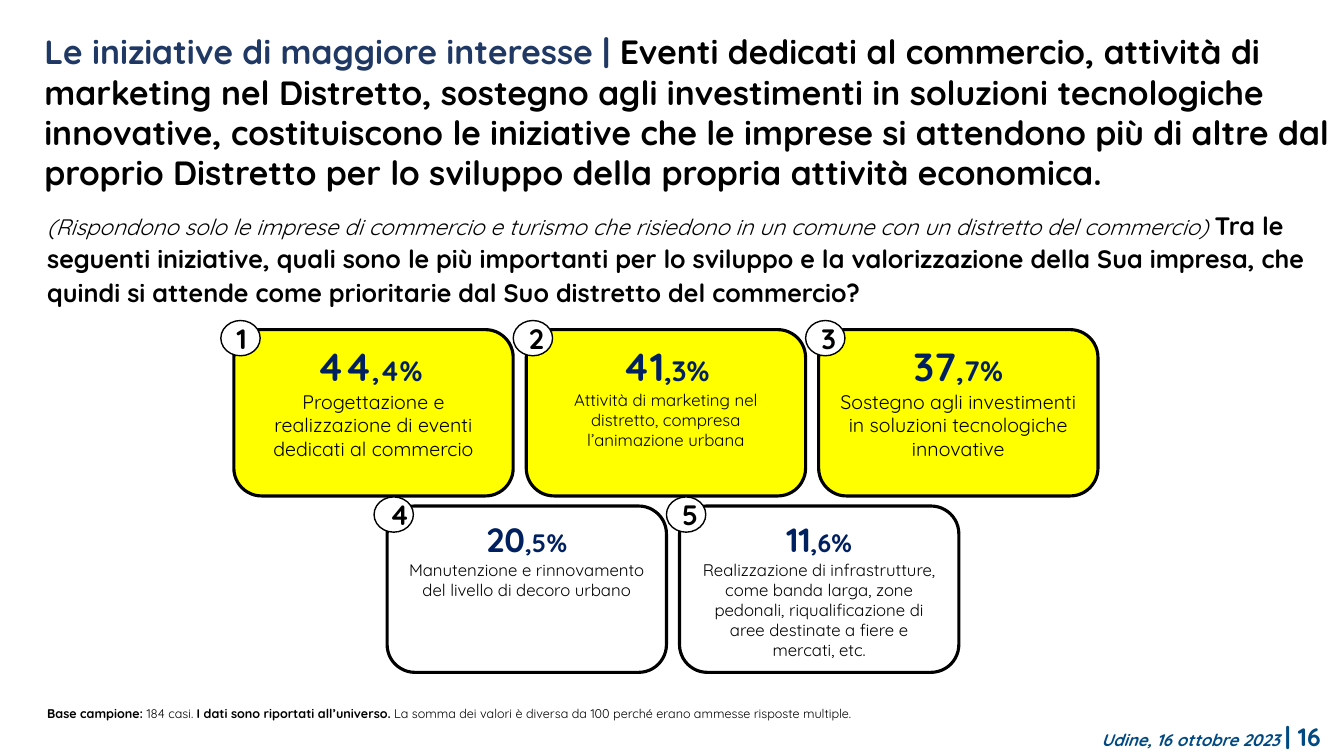
from pptx import Presentation
from pptx.dml.color import RGBColor
from pptx.enum.shapes import MSO_SHAPE
from pptx.enum.text import MSO_ANCHOR, PP_ALIGN
from pptx.util import Inches, Pt

ROUNDED, OVAL = MSO_SHAPE.ROUNDED_RECTANGLE, MSO_SHAPE.OVAL
TOP, MIDDLE = MSO_ANCHOR.TOP, MSO_ANCHOR.MIDDLE
LEFT, CENTER, RIGHT, JUSTIFY = PP_ALIGN.LEFT, PP_ALIGN.CENTER, PP_ALIGN.RIGHT, PP_ALIGN.JUSTIFY

FONT = "Quicksand"
COLORS = {"black": "000000", "white": "FFFFFF", "yellow": "FFFF00",
          "title": "203864", "figure": "002060", "footer": "014983"}

SLIDE_WIDTH, SLIDE_HEIGHT = 13.33, 7.5
MARGIN = 0.37
CARD_WIDTH, CARD_HEIGHT = 2.77, 1.65
COLUMN_STEP, ROW_STEP = 2.9, 1.75
BADGE_WIDTH, BADGE_HEIGHT = 0.39, 0.35
BADGE_SHIFT_X, BADGE_SHIFT_Y = 0.13, 0.09

# Each row: left edge, fill, sizes of whole number and decimals, cards.
# Each card: whole number, decimals, label, label size.
CARD_ROWS = [
    (2.32, "yellow", 28, 20, [
        ("44", ",4% ", "Progettazione e realizzazione di eventi dedicati al commercio", 14),
        ("41", ",3%", "Attività di marketing nel distretto, compresa l’animazione urbana", 12),
        ("37", ",7%", "Sostegno agli investimenti in soluzioni tecnologiche innovative", 14),
    ]),
    (3.84, "white", 24, 18, [
        ("20", ",5%", "Manutenzione e rinnovamento del livello di decoro urbano", 12),
        ("11", ",6%", "Realizzazione di infrastrutture, come banda larga, zone pedonali, "
                      "riqualificazione di aree destinate a fiere e mercati, etc.", 12),
    ]),
]


def color(name):
    return RGBColor.from_string(COLORS[name])


def add_span(para, text, size, ink="black", bold=False, italic=False):
    span = para.add_run()
    span.text = text
    font = span.font
    font.name, font.size, font.bold, font.italic = FONT, Pt(size), bold, italic
    font.color.rgb = color(ink)


def add_text(page, box, spans, align=LEFT, anchor=TOP, line_spacing=None, insets=(0.1, 0.05)):
    """Place one paragraph; each span is a (text, format) pair."""
    frame = page.shapes.add_textbox(*map(Inches, box)).text_frame
    frame.word_wrap = True
    frame.vertical_anchor = anchor
    frame.margin_left = frame.margin_right = Inches(insets[0])
    frame.margin_top = frame.margin_bottom = Inches(insets[1])
    para = frame.paragraphs[0]
    para.alignment = align
    if line_spacing:
        para.line_spacing = line_spacing
    for text, style in spans:
        add_span(para, text, **style)


def add_outlined(page, kind, box, fill, line_width, anchor):
    """Add a black-outlined shape and return its text frame."""
    shape = page.shapes.add_shape(kind, *map(Inches, box))
    shape.shadow.inherit = False
    shape.fill.solid()
    shape.fill.fore_color.rgb = color(fill)
    shape.line.color.rgb = color("black")
    shape.line.width = Pt(line_width)
    frame = shape.text_frame
    frame.word_wrap = True
    frame.vertical_anchor = anchor
    frame.paragraphs[0].alignment = CENTER
    return frame


def add_card(page, left, top, rank, card, fill, whole_size, decimal_size):
    whole, decimals, label, label_size = card
    frame = add_outlined(page, ROUNDED, (left, top, CARD_WIDTH, CARD_HEIGHT), fill, 2.25, TOP)
    figure = frame.paragraphs[0]
    add_span(figure, whole, whole_size, "figure", bold=True)
    add_span(figure, decimals, decimal_size, "figure", bold=True)
    caption = frame.add_paragraph()
    caption.alignment = CENTER
    add_span(caption, label, label_size)
    badge = add_outlined(page, OVAL, (left - BADGE_SHIFT_X, top - BADGE_SHIFT_Y,
                                      BADGE_WIDTH, BADGE_HEIGHT), "white", 1, MIDDLE)
    add_span(badge.paragraphs[0], str(rank), 20, bold=True)


def add_ranking(page, top):
    rank = 0
    for row, (left, fill, whole_size, decimal_size, cards) in enumerate(CARD_ROWS):
        for column, card in enumerate(cards):
            rank += 1
            add_card(page, left + column * COLUMN_STEP, top + row * ROW_STEP,
                     rank, card, fill, whole_size, decimal_size)


def add_heading(page, box):
    add_text(page, box, [
        ("Le iniziative di maggiore interesse | ", dict(size=24, ink="title", bold=True)),
        ("Eventi dedicati al commercio, attività di marketing nel Distretto, sostegno agli "
         "investimenti in soluzioni tecnologiche innovative, costituiscono le iniziative che "
         "le imprese si attendono più di altre dal proprio Distretto per lo sviluppo della "
         "propria attività economica.", dict(size=24, bold=True)),
    ], insets=(0.07, 0.04))


def add_question(page, box):
    add_text(page, box, [
        ("(Rispondono solo le imprese di commercio e turismo che risiedono in un comune con "
         "un distretto del commercio) ", dict(size=16, italic=True)),
        ("Tra le seguenti iniziative, quali sono le più importanti per lo sviluppo e la "
         "valorizzazione della Sua impresa, che quindi si attende come prioritarie dal Suo "
         "distretto del commercio?", dict(size=18, bold=True)),
    ], line_spacing=1.1)


def add_sample_note(page, box):
    add_text(page, box, [
        ("Base campione: ", dict(size=9, bold=True)),
        ("184 casi. ", dict(size=9)),
        ("I dati sono riportati all’universo. ", dict(size=9, bold=True)),
        ("La somma dei valori è diversa da 100 perché erano ammesse risposte multiple.",
         dict(size=9)),
    ], align=JUSTIFY, line_spacing=1.1)


def add_footer(page, box):
    add_text(page, box, [
        ("Udine, 16 ottobre 2023 ", dict(size=12, ink="footer", bold=True, italic=True)),
        ("| 16", dict(size=18, ink="footer", bold=True)),
    ], align=RIGHT, anchor=MIDDLE)


def main():
    deck = Presentation()
    deck.slide_width, deck.slide_height = Inches(SLIDE_WIDTH), Inches(SLIDE_HEIGHT)
    page = deck.slides.add_slide(deck.slide_layouts[6])
    add_footer(page, (6.27, 7.11, 6.93, 0.4))
    add_heading(page, (MARGIN, 0.27, 12.97, 1.69))
    add_ranking(page, 3.27)
    add_sample_note(page, (MARGIN, 6.94, 9.03, 0.25))
    add_question(page, (MARGIN, 2.01, 12.76, 1.04))
    deck.save("out.pptx")


if __name__ == "__main__":
    main()
